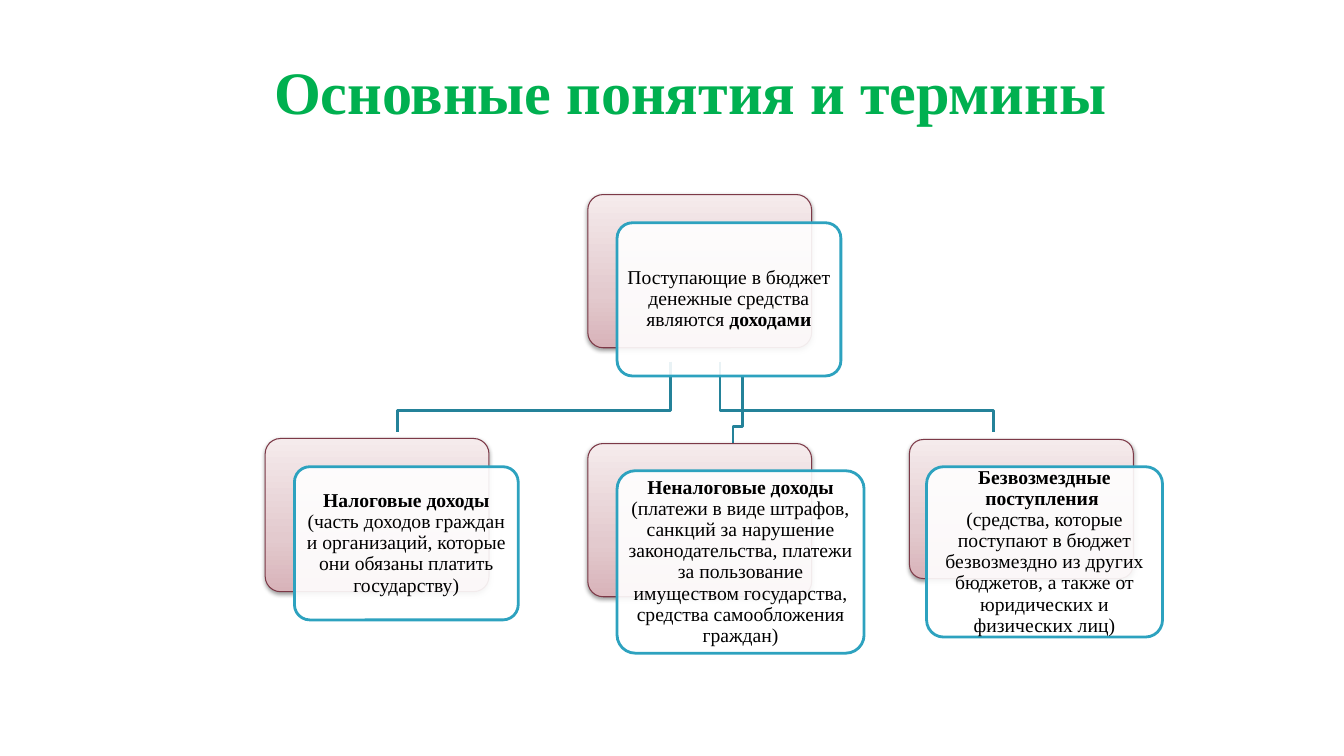
from copy import deepcopy

from lxml.etree import SubElement
from pptx import Presentation
from pptx.dml.color import RGBColor
from pptx.enum.shapes import MSO_SHAPE
from pptx.enum.text import MSO_ANCHOR, PP_ALIGN
from pptx.oxml.ns import qn
from pptx.util import Emu, Pt

PX = 9144  # 100 px to the inch
FONT = "Times New Roman"
GREEN = RGBColor(0x00, 0xB0, 0x50)
TEAL = RGBColor(0x2D, 0xA2, 0xBF)
DARK_TEAL = RGBColor(0x24, 0x82, 0x99)
MAROON = RGBColor(0x7C, 0x39, 0x47)
BLACK = RGBColor(0x00, 0x00, 0x00)
WHITE = RGBColor(0xFF, 0xFF, 0xFF)
PINK_STOPS = [
    (0, RGBColor(0xD8, 0xB3, 0xB9)),
    (0.35, RGBColor(0xE3, 0xCA, 0xCE)),
    (1, RGBColor(0xF5, 0xEB, 0xEC)),
]

# Start x, start y, bend y, end x, end y
BRANCHES = [
    (714, 359, 407, 985, 429),
    (736, 372, 423, 727, 445),
    (665, 359, 407, 394, 429),
]

# Back plate box, card box, paragraphs of (text, bold) runs
CARDS = [
    ((583, 193, 222, 152), (612, 221, 222, 152), [
        [("Поступающие в бюджет денежные средства являются ", False),
         ("доходами", True)],
    ]),
    ((263, 435, 222, 152), (292, 463, 222, 152), [
        [("Налоговые доходы ", True),
         ("(часть доходов граждан и организаций, которые они обязаны "
          "платить государству)", False)],
    ]),
    ((583, 440, 222, 152), (612, 467, 245, 181), [
        [("Неналоговые доходы ", True),
         ("(платежи в виде штрафов, санкций за нарушение законодательства, "
          "платежи за пользование имуществом государства, средства "
          "самообложения граждан)", False)],
    ]),
    ((902, 436, 222, 138), (919, 463, 234, 169), [
        [("Безвозмездные поступления ", True)],
        [("(средства, которые поступают в бюджет безвозмездно из других "
          "бюджетов, а также от юридических и физических лиц)", False)],
    ]),
]


def px(value):
    return Emu(value * PX)


def add_run(paragraph, text, size, color, bold):
    run = paragraph.add_run()
    run.text = text
    run.font.name = FONT
    run.font.size = Pt(size)
    run.font.bold = bold
    run.font.color.rgb = color


def add_title(slide, text):
    title = slide.shapes.title
    title.left, title.top, title.width, title.height = map(px, (237, 55, 895, 70))
    title.text_frame.vertical_anchor = MSO_ANCHOR.MIDDLE
    paragraph = title.text_frame.paragraphs[0]
    paragraph.alignment = PP_ALIGN.CENTER
    add_run(paragraph, text, 43, GREEN, True)


def add_branch(slide, start_x, start_y, bend_y, end_x, end_y):
    builder = slide.shapes.build_freeform(start_x, start_y, scale=PX)
    builder.add_line_segments(
        [(start_x, bend_y), (end_x, bend_y), (end_x, end_y)], close=False)
    branch = builder.convert_to_shape()
    branch.shadow.inherit = False
    branch.fill.background()
    branch.line.color.rgb = DARK_TEAL
    branch.line.width = Pt(2)


def add_rounded_box(slide, box, line_color, line_width):
    shape = slide.shapes.add_shape(MSO_SHAPE.ROUNDED_RECTANGLE, *map(px, box))
    shape.adjustments[0] = 0.1
    shape.shadow.inherit = False
    shape.line.color.rgb = line_color
    shape.line.width = Pt(line_width)
    return shape


def fill_pink_gradient(shape):
    shape.fill.gradient()
    shape.fill.gradient_angle = 90
    stop_list = shape.element.spPr.find(".//" + qn("a:gsLst"))
    stop_list.insert(1, deepcopy(stop_list[0]))
    for stop, (position, color) in zip(shape.fill.gradient_stops, PINK_STOPS):
        stop.position = position
        stop.color.rgb = color


def add_soft_shadow(shape):
    effects = shape.element.spPr.find(qn("a:effectLst"))
    shadow = SubElement(effects, qn("a:outerShdw"), blurRad=str(Pt(3.1)),
                        dist=str(Pt(1.6)), dir="5400000", rotWithShape="0")
    color = SubElement(shadow, qn("a:srgbClr"), val=str(BLACK))
    SubElement(color, qn("a:alpha"), val="38000")


def add_back_plate(slide, box):
    plate = add_rounded_box(slide, box, MAROON, 0.75)
    fill_pink_gradient(plate)
    add_soft_shadow(plate)


def add_card(slide, box, paragraphs):
    card = add_rounded_box(slide, box, TEAL, 2)
    card.fill.solid()
    card.fill.fore_color.rgb = WHITE
    color = card.element.spPr.find(qn("a:solidFill")).find(qn("a:srgbClr"))
    SubElement(color, qn("a:alpha"), val="90000")

    frame = card.text_frame
    frame.word_wrap = True
    frame.vertical_anchor = MSO_ANCHOR.MIDDLE
    frame.margin_left = frame.margin_right = px(5)
    frame.margin_top = frame.margin_bottom = px(5)
    for index, runs in enumerate(paragraphs):
        paragraph = frame.add_paragraph() if index else frame.paragraphs[0]
        paragraph.alignment = PP_ALIGN.CENTER
        paragraph.line_spacing = 0.9
        for text, bold in runs:
            add_run(paragraph, text, 14, BLACK, bold)


def main():
    presentation = Presentation()
    presentation.slide_width = px(1333)
    presentation.slide_height = px(750)
    slide = presentation.slides.add_slide(presentation.slide_layouts[5])
    add_title(slide, "Основные понятия и термины")
    for branch in BRANCHES:
        add_branch(slide, *branch)
    for plate_box, card_box, paragraphs in CARDS:
        add_back_plate(slide, plate_box)
        add_card(slide, card_box, paragraphs)
    presentation.save("out.pptx")


if __name__ == "__main__":
    main()
